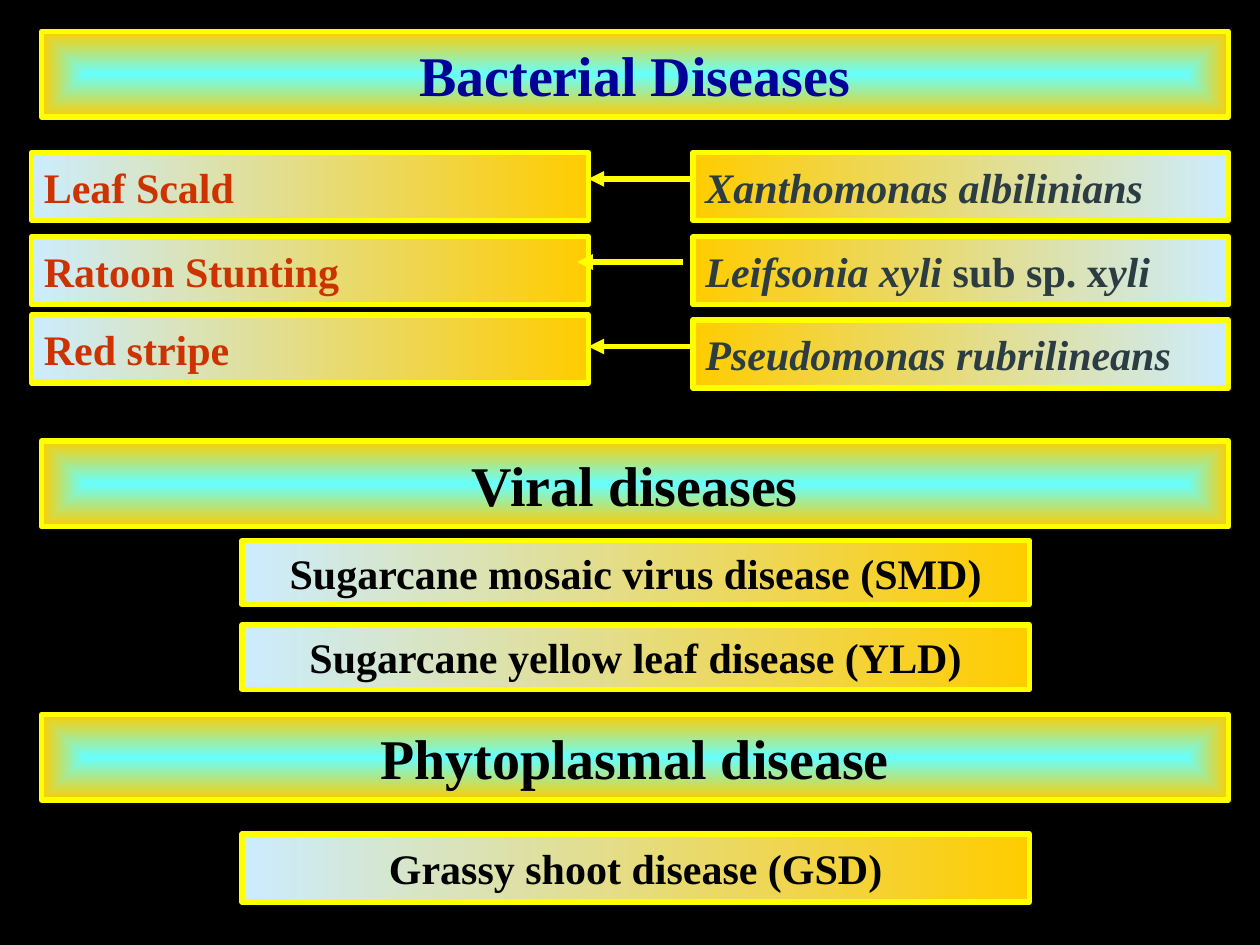
from pptx import Presentation
from pptx.dml.color import RGBColor
from pptx.enum.shapes import MSO_CONNECTOR, MSO_SHAPE
from pptx.enum.text import MSO_ANCHOR, MSO_AUTO_SIZE, PP_ALIGN
from pptx.oxml import parse_xml
from pptx.oxml.ns import nsdecls, qn
from pptx.util import Inches, Pt

COLORS = {
    "black": "000000", "yellow": "FFFF00", "gold": "FFCC00", "cyan": "66FFFF",
    "ice": "CCECFF", "navy": "000099", "red": "CC3300", "slate": "2C3C43",
}


class DiseaseSlide:
    """Draws framed gradient bars and arrows on one slide."""

    font = "Times New Roman"
    frame = Pt(3)

    def __init__(self, prs):
        self.s = prs.slides.add_slide(prs.slide_layouts[5])
        fill = self.s.background.fill
        fill.solid()
        fill.fore_color.rgb = self.rgb("black")

    def rgb(self, name):
        return RGBColor.from_string(COLORS[name])

    def rect(self, left, top, width, height):
        sp = self.s.shapes.add_shape(
            MSO_SHAPE.RECTANGLE, Inches(left), Inches(top), Inches(width), Inches(height))
        sp.shadow.inherit = False
        return sp

    def outline(self, line):
        line.color.rgb = self.rgb("yellow")
        line.width = self.frame

    def gradient(self, sp, start, end):
        sp.fill.gradient()
        sp.fill.gradient_angle = 0
        for stop, name in zip(sp.fill.gradient_stops, (start, end)):
            stop.color.rgb = self.rgb(name)

    def label(self, sp, parts, size, color, align):
        tf = sp.text_frame
        tf.word_wrap = True
        tf.auto_size = MSO_AUTO_SIZE.NONE
        tf.vertical_anchor = MSO_ANCHOR.MIDDLE
        p = tf.paragraphs[0]
        p.alignment = align
        for text, italic in parts:
            r = p.add_run()
            r.text = text
            r.font.name = self.font
            r.font.size = Pt(size)
            r.font.bold = True
            r.font.italic = italic
            r.font.color.rgb = self.rgb(color)

    def heading(self, text, top, color="black", title=False):
        if title:
            sp = self.s.shapes.title
            sp.left, sp.top = Inches(0.33), Inches(top)
            sp.width, sp.height = Inches(9.42), Inches(0.68)
        else:
            sp = self.rect(0.33, top, 9.42, 0.68)
        self.gradient(sp, "cyan", "gold")
        grad = sp.element.spPr.find(qn("a:gradFill"))
        grad.remove(grad.find(qn("a:lin")))
        grad.append(parse_xml(
            f'<a:path {nsdecls("a")} path="shape">'
            '<a:fillToRect l="50000" t="50000" r="50000" b="50000"/></a:path>'))
        self.outline(sp.line)
        self.label(sp, [(text, False)], 32, color, PP_ALIGN.CENTER)

    def bar(self, parts, box, color="black", align=PP_ALIGN.CENTER, ends=("ice", "gold")):
        sp = self.rect(*box)
        self.gradient(sp, *ends)
        self.outline(sp.line)
        self.label(sp, parts, 24, color, align)

    def arrow(self, start, end, y):
        cx = self.s.shapes.add_connector(
            MSO_CONNECTOR.STRAIGHT, Inches(start), Inches(y), Inches(end), Inches(y))
        self.outline(cx.line)
        spPr = cx.element.spPr
        spPr.find(qn("a:ln")).append(
            parse_xml(f'<a:tailEnd {nsdecls("a")} type="triangle"/>'))
        spPr.append(parse_xml(f'<a:effectLst {nsdecls("a")}/>'))


def main():
    prs = Presentation()
    prs.slide_width, prs.slide_height = Inches(10), Inches(7.5)
    slide = DiseaseSlide(prs)

    slide.heading("Bacterial Diseases", 0.25, "navy", title=True)
    bacterial = [
        ("Leaf Scald", 1.21, [("Xanthomonas albilinians", True)], 1.21),
        ("Ratoon Stunting", 1.88,
         [("Leifsonia xyli", True), (" sub sp. x", False), ("yli", True)], 1.88),
        ("Red stripe", 2.5, [("Pseudomonas rubrilineans", True)], 2.54),
    ]
    for disease, top, pathogen, pathogen_top in bacterial:
        slide.bar([(disease, False)], (0.25, top, 4.42, 0.54), "red", PP_ALIGN.LEFT)
        slide.bar(pathogen, (5.5, pathogen_top, 4.25, 0.54), "slate", PP_ALIGN.LEFT,
                  ("gold", "ice"))
    for start, end, y in [(5.5, 4.67, 1.42), (5.42, 4.58, 2.08), (5.5, 4.67, 2.75)]:
        slide.arrow(start, end, y)

    slide.heading("Viral diseases", 3.5)
    slide.heading("Phytoplasmal disease", 5.67)
    for disease, top, height in [
        ("Sugarcane mosaic virus disease (SMD)", 4.29, 0.51),
        ("Sugarcane yellow leaf disease (YLD)", 4.96, 0.51),
        ("Grassy shoot disease (GSD)", 6.62, 0.54),
    ]:
        slide.bar([(disease, False)], (1.92, top, 6.25, height))

    prs.save("out.pptx")


if __name__ == "__main__":
    main()
